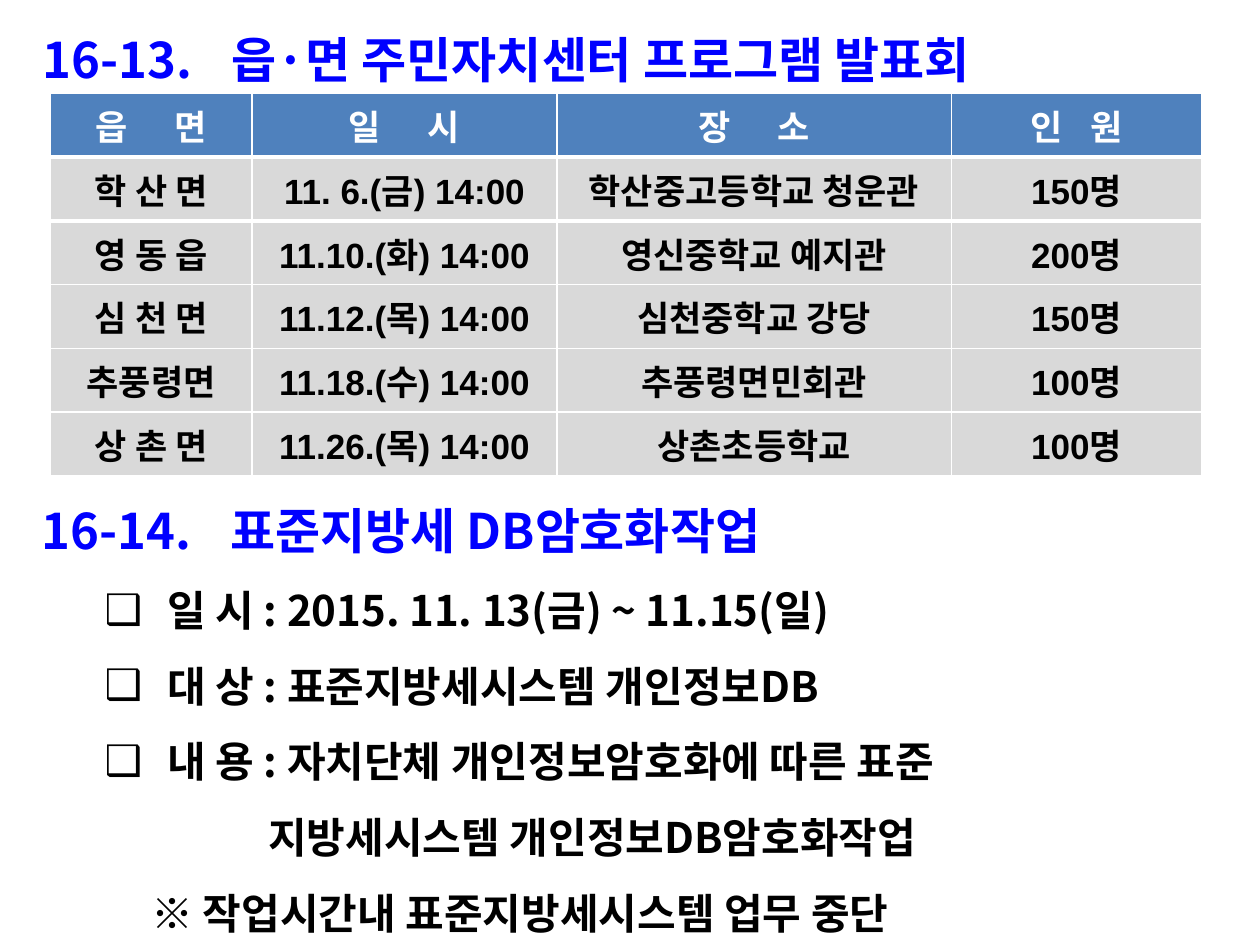
import dataclasses

import pptx
import pptx.dml.color
import pptx.enum.text
import pptx.oxml
import pptx.oxml.ns
import pptx.util

Inches = pptx.util.Inches
Pt = pptx.util.Pt
Text = pptx.enum.text
NS = pptx.oxml.ns.nsdecls("a")


@dataclasses.dataclass(frozen=True)
class Theme:
    blue: str = "0000FF"
    black: str = "000000"
    white: str = "FFFFFF"
    head: str = "4F81BD"
    cell: str = "D9D9D9"
    font: str = "Noto Sans CJK KR"
    grid: str = "Arial"
    big: int = 28
    list: int = 24
    small: int = 20


THEME = Theme()
TAB = 1.41

HEADS = [("읍", "면", 22), ("일", "시", 22), ("장", "소", 22), ("인", "원", 11)]
ROWS = [
    ("학 산 면", "11. 6.(금) 14:00", "학산중고등학교 청운관", "150명"),
    ("영 동 읍", "11.10.(화) 14:00", "영신중학교 예지관", "200명"),
    ("심 천 면", "11.12.(목) 14:00", "심천중학교 강당", "150명"),
    ("추풍령면", "11.18.(수) 14:00", "추풍령면민회관", "100명"),
    ("상 촌 면", "11.26.(목) 14:00", "상촌초등학교", "100명"),
]
# Text, left indent in inches, bullet
ITEMS = [
    ("일 시 : 2015. 11. 13(금) ~ 11.15(일)", 1, True),
    ("대 상 : 표준지방세시스템 개인정보DB", 1, True),
    ("내 용 : 자치단체 개인정보암호화에 따른 표준", 1, True),
    ("지방세시스템 개인정보DB암호화작업", 1.8, False),
    ("※ 작업시간내 표준지방세시스템 업무 중단", 0.87, False),
]


def paint(para, size, color, font):
    """Format every run of a paragraph."""
    for run in para.runs:
        run.font.size = Pt(size)
        run.font.bold = True
        run.font.name = font
        run.font.color.rgb = pptx.dml.color.RGBColor.from_string(color)


def lay(para, left=0, hang=0, marks=("<a:buNone {}/>",)):
    """Set the indents, bullet and tabs of a paragraph."""
    props = para._p.get_or_add_pPr()
    props.set("marL", str(Inches(left)))
    props.set("indent", str(-Inches(hang)))
    for mark in marks:
        props.append(pptx.oxml.parse_xml(mark.format(NS)))


def heading(para, text, space):
    para.text = text
    tab = f'<a:tabLst {{}}><a:tab pos="{Inches(TAB)}" algn="l"/></a:tabLst>'
    lay(para, marks=("<a:buNone {}/>", tab))
    para.alignment = Text.PP_ALIGN.LEFT
    para.line_spacing = space
    para.space_before = Pt(0)
    paint(para, THEME.big, THEME.blue, THEME.font)


def place(shape, box):
    """Move a placeholder to its box and return its text frame."""
    shape.left, shape.top, shape.width, shape.height = map(Inches, box)
    frame = shape.text_frame
    frame.word_wrap = True
    frame.auto_size = Text.MSO_AUTO_SIZE.NONE
    frame.vertical_anchor = Text.MSO_ANCHOR.TOP
    return frame


def add_title(slide, box):
    frame = place(slide.shapes.title, box)
    heading(frame.paragraphs[0], "16-13.\t읍·면 주민자치센터 프로그램 발표회", 1.5)


def add_list(slide, box):
    frame = place(slide.placeholders[1], box)
    heading(frame.paragraphs[0], "16-14.\t표준지방세 DB암호화작업", 1.2)
    bullet = (
        f'<a:buClr {{}}><a:srgbClr val="{THEME.black}"/></a:buClr>',
        '<a:buChar {} char="❑"/>',
    )
    for text, left, dot in ITEMS:
        para = frame.add_paragraph()
        para.text = text
        if dot:
            lay(para, left, 0.5, bullet)
        else:
            lay(para, left)
        para.line_spacing = 1.5
        para.space_before = Pt(0)
        paint(para, THEME.list, THEME.black, THEME.font)


def fill_cell(cell, fill, color):
    cell.fill.solid()
    cell.fill.fore_color.rgb = pptx.dml.color.RGBColor.from_string(fill)
    cell.vertical_anchor = Text.MSO_ANCHOR.MIDDLE
    para = cell.text_frame.paragraphs[0]
    para.alignment = Text.PP_ALIGN.CENTER
    paint(para, THEME.small, color, THEME.grid)


def rule(cell, side, width):
    """Draw a white border on one side of a cell."""
    line = pptx.oxml.parse_xml(
        f'<a:{side} {NS} w="{Pt(width)}"><a:solidFill>'
        f'<a:srgbClr val="{THEME.white}"/></a:solidFill></a:{side}>'
    )
    cell._tc.get_or_add_tcPr().insert(0, line)


def add_grid(slide, box):
    shape = slide.shapes.add_table(len(ROWS) + 1, len(HEADS), *map(Inches, box))
    table = shape.table
    for col, width in zip(table.columns, (1.6, 2.42, 3.13, 1.99)):
        col.width = Inches(width)
    # Header syllables are spread by a widened space
    for cell, (first, last, gap) in zip(table.rows[0].cells, HEADS):
        para = cell.text_frame.paragraphs[0]
        for part in (first, " ", last):
            para.add_run().text = part
        para.runs[1].font._element.set("spc", str(gap * 100))
        fill_cell(cell, THEME.head, THEME.white)
        rule(cell, "lnB", 3)
    for num, texts in enumerate(ROWS, 1):
        for cell, text in zip(table.rows[num].cells, texts):
            cell.text_frame.text = text
            fill_cell(cell, THEME.cell, THEME.black)
            if num == 1:
                rule(cell, "lnT", 3)


def main():
    deck = pptx.Presentation()
    deck.slide_width, deck.slide_height = Inches(10), Inches(7.5)
    slide = deck.slides.add_slide(deck.slide_layouts[1])
    add_title(slide, (0.24, -0.05, 9.49, 3.31))
    add_grid(slide, (0.4, 0.74, 9.14, 3.04))
    add_list(slide, (0.23, 3.83, 8.2, 3.55))
    deck.save("out.pptx")


if __name__ == "__main__":
    main()
